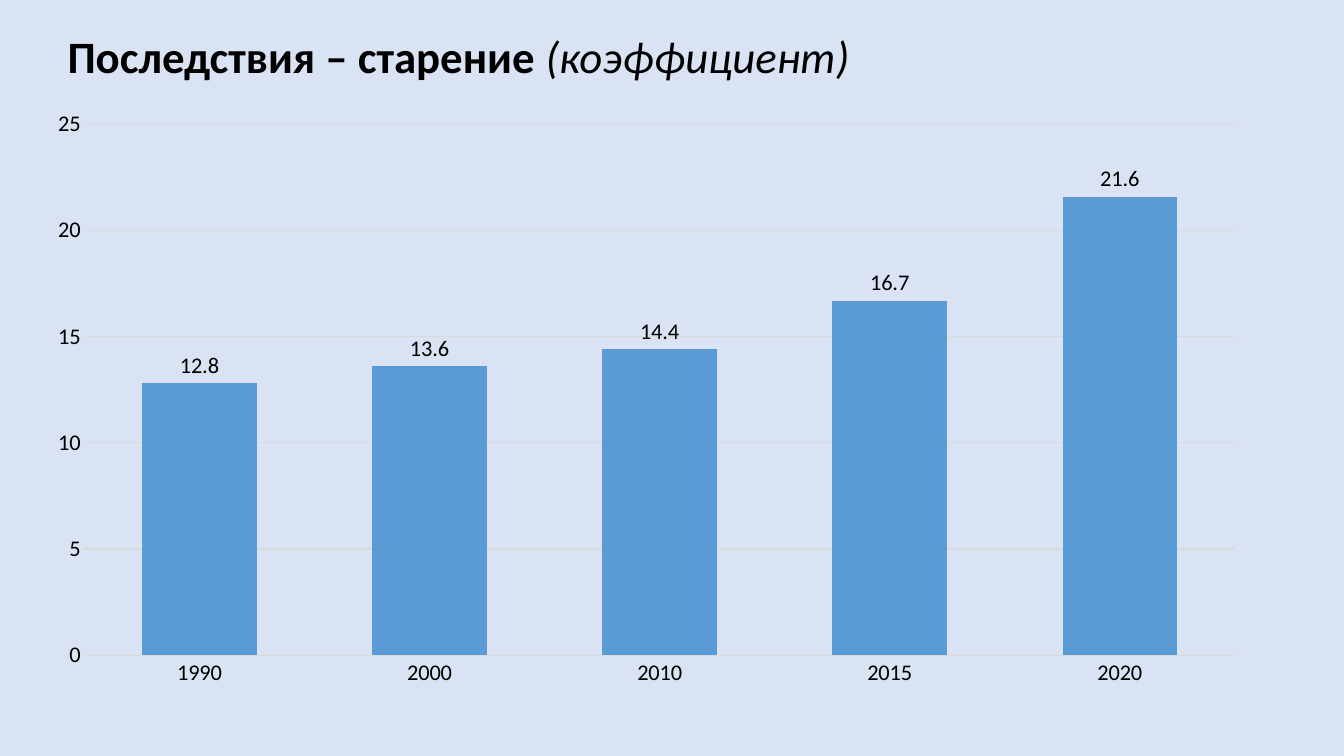
from pptx import Presentation
from pptx import util as u
from pptx.chart.data import CategoryChartData
from pptx.dml.color import RGBColor
from pptx.enum import chart as ch, text

COLUMNS, ROWS = 40, 30
AGEING = {"1990": 12.8, "2000": 13.6, "2010": 14.4, "2015": 16.7, "2020": 21.6}


def colour(hex_value):
    return RGBColor.from_string(hex_value)


def apply(target, values):
    for name, value in values.items():
        setattr(target, name, value)


class Deck:
    background, ink, grid, bar = "DAE3F3", "000000", "D9D9D9", "5B9BD5"
    face = "Calibri"

    def __init__(self):
        self.prs = Presentation()
        apply(self.prs, {"slide_width": u.Inches(13.33), "slide_height": u.Inches(7.5)})
        self.slide = self.prs.slides.add_slide(self.prs.slide_layouts[5])
        self.fill(self.slide.background, self.background)

    def box(self, column, row, columns, rows):
        cell_w = self.prs.slide_width / COLUMNS
        cell_h = self.prs.slide_height / ROWS
        return [round(v) for v in (column * cell_w, row * cell_h,
                                   columns * cell_w, rows * cell_h)]

    def fill(self, target, hex_value):
        target.fill.solid()
        target.fill.fore_color.rgb = colour(hex_value)

    def font(self, font, size, **style):
        apply(font, {"name": self.face, "size": u.Pt(size), **style})
        font.color.rgb = colour(self.ink)

    def line(self, line):
        line.color.rgb = colour(self.grid)
        line.width = u.Pt(0.75)

    def title(self, place, parts):
        heading = self.slide.shapes.title
        apply(heading, dict(zip(("left", "top", "width", "height"), self.box(*place))))
        apply(heading.text_frame, {"vertical_anchor": text.MSO_ANCHOR.MIDDLE,
                                   "word_wrap": True})
        paragraph = heading.text_frame.paragraphs[0]
        apply(paragraph, {"alignment": text.PP_ALIGN.LEFT, "line_spacing": 0.9})
        for wording, style in parts:
            run = paragraph.add_run()
            run.text = wording
            self.font(run.font, 32, **style)

    def columns(self, place, name, values):
        data = CategoryChartData()
        data.categories = list(values)
        data.add_series(name, list(values.values()))
        chart = self.slide.shapes.add_chart(
            ch.XL_CHART_TYPE.COLUMN_CLUSTERED, *self.box(*place), data).chart
        apply(chart, {"has_legend": False, "has_title": False})
        self.font(chart.font, 16)

        # Bars and their values
        plot = chart.plots[0]
        apply(plot, {"gap_width": 101, "overlap": -27, "vary_by_categories": False,
                     "has_data_labels": True})
        self.fill(plot.series[0].format, self.bar)
        apply(plot.data_labels, {"show_value": True,
                                 "position": ch.XL_LABEL_POSITION.OUTSIDE_END})
        self.font(plot.data_labels.font, 16)

        # Axes and gridlines
        years, scale = chart.category_axis, chart.value_axis
        for axis in (years, scale):
            apply(axis, {"major_tick_mark": ch.XL_TICK_MARK.NONE,
                         "minor_tick_mark": ch.XL_TICK_MARK.NONE})
            self.font(axis.tick_labels.font, 16)
        apply(scale, {"minimum_scale": 0, "maximum_scale": 25, "major_unit": 5,
                      "has_major_gridlines": True})
        self.line(years.format.line)
        self.line(scale.major_gridlines.format.line)
        scale.format.line.fill.background()


def main():
    deck = Deck()

    # Heading
    deck.title((1.71, 0.8, 34.5, 3.08),
               [("Последствия – старение ", {"bold": True}),
                ("(коэффициент)", {"bold": False, "italic": True})])

    # Ageing coefficient by year
    deck.columns((1, 3.92, 36.48, 23.8), "Series 1", AGEING)

    deck.prs.save("out.pptx")


if __name__ == "__main__":
    main()
